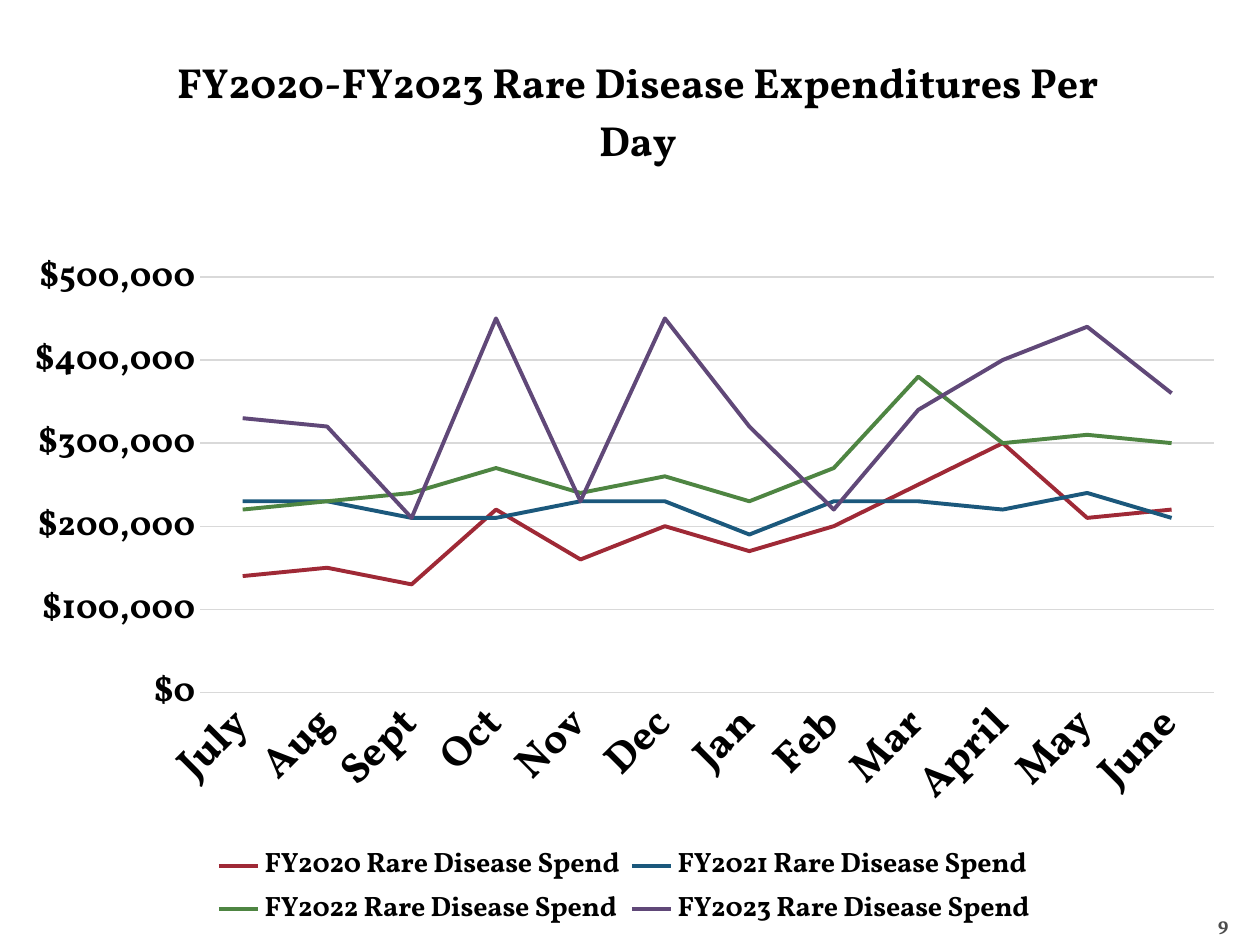
"""Builds a slide with a line chart of rare disease expenditures per day."""
from lxml import etree
from pptx import Presentation
from pptx.chart.data import CategoryChartData
from pptx.dml.color import RGBColor
from pptx.enum.chart import XL_CHART_TYPE, XL_LEGEND_POSITION, XL_MARKER_STYLE, XL_TICK_MARK
from pptx.enum.text import MSO_ANCHOR, PP_ALIGN
from pptx.oxml import parse_xml
from pptx.oxml.ns import nsdecls, qn
from pptx.util import Inches, Pt

FONT = "Vollkorn"
BLACK = RGBColor(0x00, 0x00, 0x00)
GRAY = RGBColor(0x4D, 0x4D, 0x4D)
GRID = RGBColor(0xD9, 0xD9, 0xD9)
RED = RGBColor(0x9F, 0x29, 0x36)
BLUE = RGBColor(0x1B, 0x58, 0x7C)
GREEN = RGBColor(0x4E, 0x85, 0x42)
PURPLE = RGBColor(0x60, 0x48, 0x78)

MONTHS = ["July", "Aug", "Sept", "Oct", "Nov", "Dec",
          "Jan", "Feb", "Mar", "April", "May", "June"]
SPEND_THOUSANDS = [
    ("FY2020", RED, [140, 150, 130, 220, 160, 200, 170, 200, 250, 300, 210, 220]),
    ("FY2021", BLUE, [230, 230, 210, 210, 230, 230, 190, 230, 230, 220, 240, 210]),
    ("FY2022", GREEN, [220, 230, 240, 270, 240, 260, 230, 270, 380, 300, 310, 300]),
    ("FY2023", PURPLE, [330, 320, 210, 450, 230, 450, 320, 220, 340, 400, 440, 360]),
]


def set_font(font, size, color=BLACK):
    font.name = FONT
    font.size = Pt(size)
    font.bold = True
    font.color.rgb = color


def set_layout(parent, after, inner=False, **box):
    for old in parent.findall(qn("c:layout")):
        parent.remove(old)
    layout = parse_xml(f"<c:layout {nsdecls('c')}><c:manualLayout/></c:layout>")
    values = {"layoutTarget": "inner"} if inner else {}
    values.update(xMode="edge", yMode="edge", **box)
    for name, value in values.items():
        etree.SubElement(layout[0], qn(f"c:{name}")).set("val", str(value))
    if after is None:
        parent.insert(0, layout)
    else:
        after.addnext(layout)


prs = Presentation()
prs.slide_width, prs.slide_height = Inches(10), Inches(7.5)
s = prs.slides.add_slide(prs.slide_layouts[6])

number = s.shapes.add_textbox(Inches(9.25), Inches(7.02), Inches(0.5), Inches(0.4))
tf = number.text_frame
tf.word_wrap = True
tf.vertical_anchor = MSO_ANCHOR.BOTTOM
tf.margin_left = tf.margin_right = tf.margin_bottom = 0
p = tf.paragraphs[0]
p.text = "9"
p.alignment = PP_ALIGN.RIGHT
set_font(p.font, 11, GRAY)

data = CategoryChartData(number_format='"$"#,##0')
data.categories = MONTHS
for year, color, values in SPEND_THOUSANDS:
    data.add_series(f"{year} Rare Disease Spend", [v * 1000 for v in values])
chart = s.shapes.add_chart(XL_CHART_TYPE.LINE, Inches(0.08), Inches(0.08),
                           Inches(9.75), Inches(7.33), data).chart
chart.font.name = FONT
chart.font.size = Pt(10)
chart.font.color.rgb = BLACK

chart.has_title = True
title = chart.chart_title
p = title.text_frame.paragraphs[0]
p.text = "FY2020-FY2023 Rare Disease Expenditures Per Day"
set_font(p.font, 24)
title.include_in_layout = False
set_layout(title._element, title._element.find(qn("c:tx")), x=0.13, y=0.04)

plot = chart.plots[0]
plot.vary_by_categories = False
for series, (year, color, values) in zip(plot.series, SPEND_THOUSANDS):
    series.smooth = False
    series.marker.style = XL_MARKER_STYLE.NONE
    series.format.line.color.rgb = color
    series.format.line.width = Pt(2.25)
set_layout(chart._chartSpace.chart.plotArea, None, inner=True,
           x=0.155, y=0.289, w=0.825, h=0.45)

cat = chart.category_axis
cat.major_tick_mark = XL_TICK_MARK.NONE
cat.format.line.color.rgb = GRID
cat.format.line.width = Pt(0.75)
set_font(cat.tick_labels.font, 24)
cat._element.find(qn("c:txPr")).find(qn("a:bodyPr")).set("rot", "-2700000")

val = chart.value_axis
val.minimum_scale, val.maximum_scale, val.major_unit = 0, 500000, 100000
val.major_tick_mark = XL_TICK_MARK.NONE
val.format.line.fill.background()
val.major_gridlines.format.line.color.rgb = GRID
val.major_gridlines.format.line.width = Pt(0.75)
val.tick_labels.number_format = '"$"#,##0'
val.tick_labels.number_format_is_linked = False
set_font(val.tick_labels.font, 20)

chart.has_legend = True
legend = chart.legend
legend.position = XL_LEGEND_POSITION.BOTTOM
legend.include_in_layout = False
set_font(legend.font, 16)
set_layout(legend._element, legend._element.find(qn("c:legendPos")),
           x=0.16, y=0.9, w=0.68, h=0.1)

prs.save("out.pptx")
